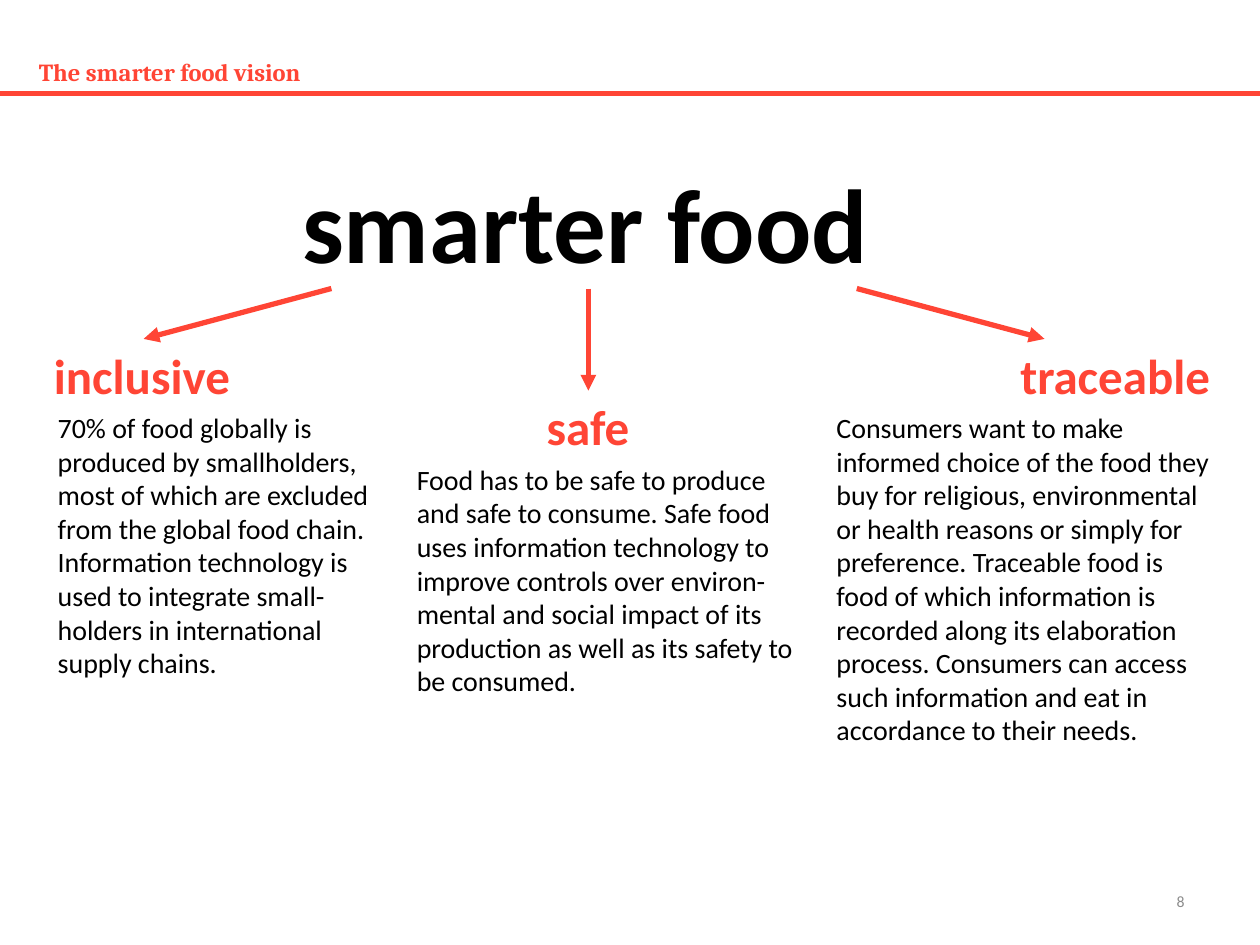
from dataclasses import dataclass

import pptx
import pptx.dml.color
import pptx.enum.shapes
import pptx.enum.text
import pptx.oxml
import pptx.oxml.ns
import pptx.util
from pptx.util import Inches

RED, BLACK, GREY = "FF4535", "000000", "8C8C8C"
TOP, MIDDLE = pptx.enum.text.MSO_ANCHOR.TOP, pptx.enum.text.MSO_ANCHOR.MIDDLE
LEFT, RIGHT = pptx.enum.text.PP_ALIGN.LEFT, pptx.enum.text.PP_ALIGN.RIGHT

HEADING = {"size": pptx.util.Pt(28), "name": "Calibri", "bold": True}
BODY = {"size": pptx.util.Pt(16), "name": "Calibri"}


@dataclass
class Box:
    left: float
    top: float
    width: float
    height: float


@dataclass
class Pillar:
    heading: str
    heading_box: Box
    body: str
    body_box: Box
    arrow: tuple[float, float, float, float]


PILLARS = [
    Pillar("inclusive", Box(0.33, 2.69, 1.61, 0.57),
           "70% of food globally is produced by smallholders, most of which are "
           "excluded from the global food chain. Information technology is used to "
           "integrate small-holders in international supply chains.",
           Box(0.36, 3.21, 2.75, 2.26), (2.63, 2.29, 1.14, 2.69)),
    Pillar("safe", Box(4.24, 3.1, 0.87, 0.57),
           "Food has to be safe to produce and safe to consume. Safe food uses "
           "information technology to improve controls over environ-mental and social "
           "impact of its production as well as its safety to be consumed.",
           Box(3.21, 3.62, 3.27, 1.99), (4.67, 2.29, 4.67, 3.1)),
    Pillar("traceable", Box(8, 2.69, 1.73, 0.57),
           "Consumers want to make informed choice of the food they buy for religious, "
           "environmental or health reasons or simply for preference. Traceable food is "
           "food of which information is recorded along its elaboration process. "
           "Consumers can access such information and eat in accordance to their needs.",
           Box(6.54, 3.21, 3.25, 2.79), (6.8, 2.29, 8.29, 2.69)),
]


def rgb(value: str) -> pptx.dml.color.RGBColor:
    return pptx.dml.color.RGBColor.from_string(value)


def add_text(s, text: str, box: Box, font: dict, color: str,
             wrap: bool = True, anchor=TOP, align=LEFT) -> None:
    sp = s.shapes.add_textbox(Inches(box.left), Inches(box.top),
                              Inches(box.width), Inches(box.height))
    tf = sp.text_frame
    tf.word_wrap = wrap
    tf.vertical_anchor = anchor
    p = tf.paragraphs[0]
    p.alignment = align
    r = p.add_run()
    r.text = text
    for key, value in font.items():
        setattr(r.font, key, value)
    r.font.color.rgb = rgb(color)


def add_line(s, ends: tuple[float, float, float, float], width: float,
             arrow: bool = False) -> None:
    cx = s.shapes.add_connector(pptx.enum.shapes.MSO_CONNECTOR.STRAIGHT,
                                *(Inches(v) for v in ends))
    cx.line.color.rgb = rgb(RED)
    cx.line.width = pptx.util.Pt(width)
    if arrow:
        ln = cx.line._get_or_add_ln()
        ln.append(pptx.oxml.parse_xml(
            f'<a:tailEnd {pptx.oxml.ns.nsdecls("a")} type="triangle"/>'))
    cx._element.spPr.append(pptx.oxml.parse_xml(
        f'<a:effectLst {pptx.oxml.ns.nsdecls("a")}/>'))


def main() -> None:
    prs = pptx.Presentation()
    prs.slide_width, prs.slide_height = Inches(10), Inches(7.5)
    s = prs.slides.add_slide(prs.slide_layouts[6])

    add_line(s, (0, 0.74, 10, 0.74), 2.7)
    add_text(s, "The smarter food vision", Box(0.21, 0.39, 9, 0.35),
             {"size": pptx.util.Pt(14), "name": "Cambria", "bold": True},
             RED, anchor=MIDDLE)
    add_text(s, "smarter food", Box(2.3, 1.21, 4.74, 1.11),
             HEADING | {"size": pptx.util.Pt(60)}, BLACK, wrap=False)

    for pillar in PILLARS:
        add_text(s, pillar.heading, pillar.heading_box, HEADING, RED, wrap=False)
        add_text(s, pillar.body, pillar.body_box, BODY, BLACK)
        add_line(s, pillar.arrow, 3, arrow=True)

    add_text(s, "8", Box(7.17, 6.95, 2.33, 0.4),
             {"size": pptx.util.Pt(9), "name": "Calibri"}, GREY,
             anchor=MIDDLE, align=RIGHT)
    prs.save("out.pptx")


if __name__ == "__main__":
    main()
